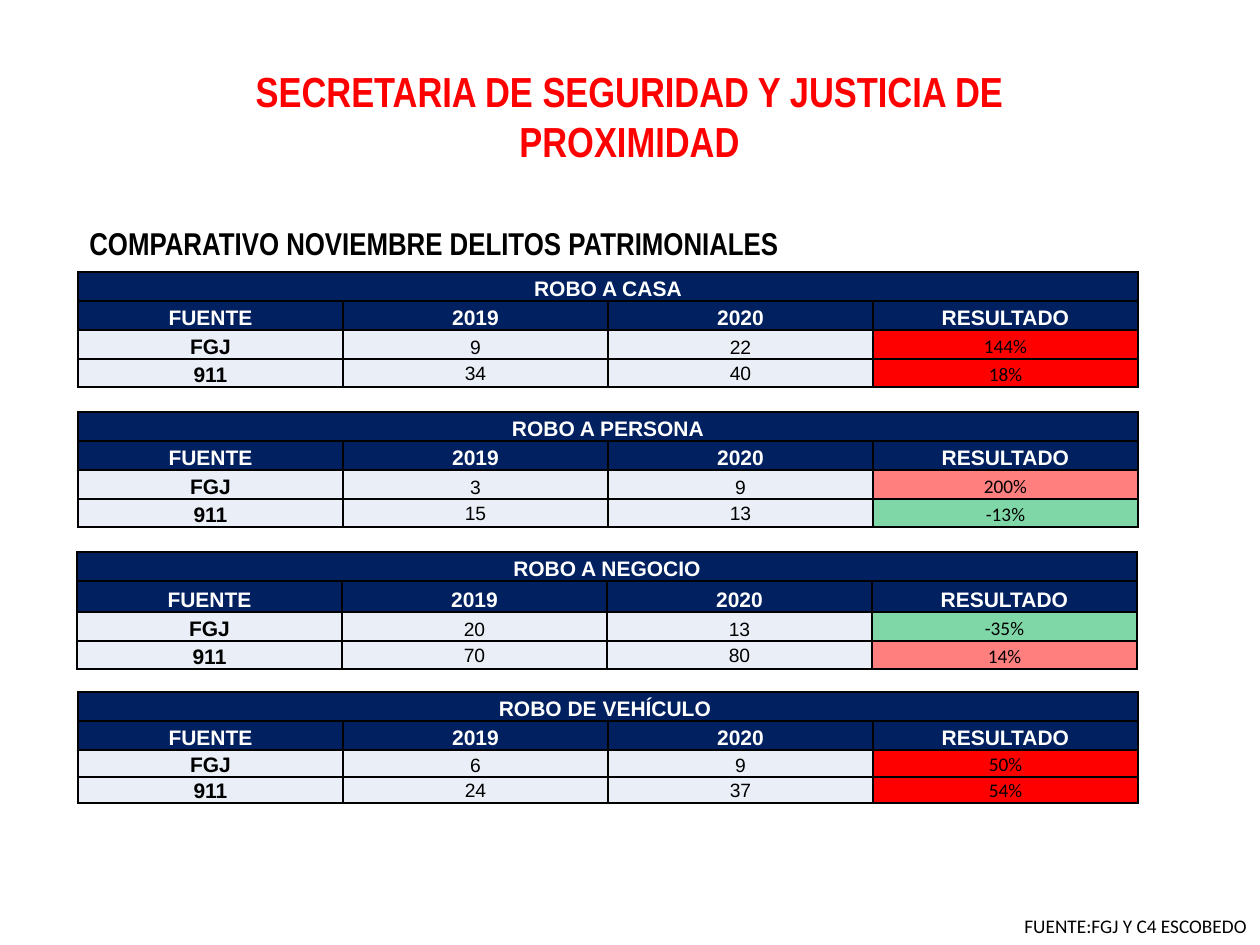
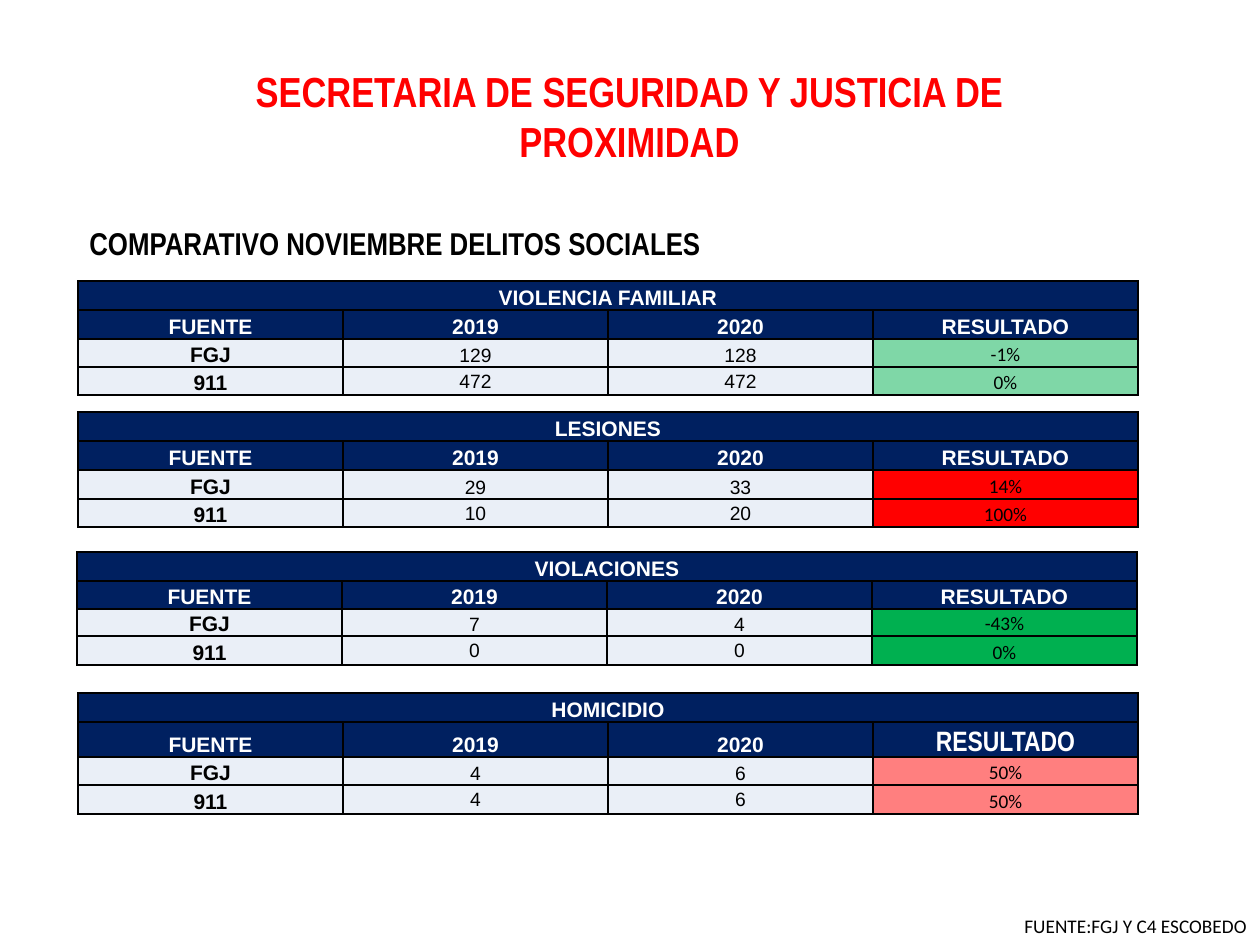
"""Build the November comparison slides on property and social crimes."""

from dataclasses import dataclass

import lxml.etree
import pptx
import pptx.dml.color
import pptx.enum.text
import pptx.oxml.ns
import pptx.presentation
import pptx.shapes.base
import pptx.slide
import pptx.table
import pptx.text.text
import pptx.util

PX_PER_INCH = 126
ALIGN = pptx.enum.text.PP_ALIGN
ANCHOR = pptx.enum.text.MSO_ANCHOR


@dataclass(frozen=True)
class TextStyle:
    font: str
    size: int
    color: str
    bold: bool = False


@dataclass(frozen=True)
class Theme:
    navy: str = "002060"
    pale: str = "EAEFF7"
    rise: str = "FF0000"
    fall: str = "00B050"
    border: str = "000000"
    border_points: int = 1
    title: TextStyle = TextStyle("Arial Narrow", 24, "FF0000", True)
    subtitle: TextStyle = TextStyle("Arial Narrow", 18, "000000", True)
    header: TextStyle = TextStyle("Arial", 12, "FFFFFF", True)
    large_header: TextStyle = TextStyle("Arial Narrow", 16, "FFFFFF", True)
    source: TextStyle = TextStyle("Arial", 12, "000000", True)
    number: TextStyle = TextStyle("Arial", 11, "000000")
    result: TextStyle = TextStyle("Calibri", 11, "000000")
    footer: TextStyle = TextStyle("Calibri", 11, "000000")


THEME = Theme()


@dataclass(frozen=True)
class Box:
    left: int
    top: int
    width: int
    height: int


@dataclass(frozen=True)
class CrimeTable:
    name: str
    top: int
    row_heights: tuple[int, int, int, int]
    prosecutor: tuple[int, int]
    emergency: tuple[int, int]
    opacity: int = 100
    left: int = 78
    result_header: TextStyle = THEME.header


@dataclass(frozen=True)
class CrimeSlide:
    subtitle: str
    tables: tuple[CrimeTable, ...]


TITLE = "SECRETARIA DE SEGURIDAD Y JUSTICIA DE PROXIMIDAD"
FOOTER = "FUENTE:FGJ Y C4 ESCOBEDO"
HEADERS = ("FUENTE", "2019", "2020", "RESULTADO")
TITLE_BOX = Box(239, 59, 781, 115)
SUBTITLE_BOX = Box(77, 218, 930, 50)
FOOTER_BOX = Box(1012, 908, 249, 37)
COLUMN_WIDTH = 265

SLIDES = (
    CrimeSlide("COMPARATIVO NOVIEMBRE DELITOS PATRIMONIALES", (
        CrimeTable("ROBO A CASA", 272, (29, 29, 29, 28), (9, 22), (34, 40)),
        CrimeTable("ROBO A PERSONA", 412, (29, 29, 29, 28), (3, 9), (15, 13), 50),
        CrimeTable("ROBO A NEGOCIO", 552, (29, 31, 29, 28), (20, 13), (70, 80), 50, 77),
        CrimeTable("ROBO DE VEHÍCULO ", 692, (29, 29, 27, 26), (6, 9), (24, 37)),
    )),
    CrimeSlide("COMPARATIVO NOVIEMBRE DELITOS SOCIALES", (
        CrimeTable("VIOLENCIA FAMILIAR", 281, (29, 29, 28, 28), (129, 128), (472, 472), 50),
        CrimeTable("LESIONES", 412, (29, 29, 29, 28), (29, 33), (10, 20)),
        CrimeTable("VIOLACIONES", 552, (29, 28, 27, 29), (7, 4), (0, 0), left=77),
        CrimeTable("HOMICIDIO", 693, (29, 35, 28, 29), (4, 6), (4, 6), 50,
                   result_header=THEME.large_header),
    )),
)


def px(length: int) -> pptx.util.Emu:
    """Turn pixels into EMU."""
    return pptx.util.Emu(round(length * pptx.util.Inches(1) / PX_PER_INCH))


def write_text(text_frame: pptx.text.text.TextFrame, text: str, style: TextStyle,
               alignment: ALIGN) -> None:
    """Set the text of a frame and format its runs."""
    text_frame.text = text
    for paragraph in text_frame.paragraphs:
        paragraph.alignment = alignment
        for run in paragraph.runs:
            run.font.name = style.font
            run.font.size = pptx.util.Pt(style.size)
            run.font.bold = style.bold
            run.font.color.rgb = pptx.dml.color.RGBColor.from_string(style.color)


def place(shape: pptx.shapes.base.BaseShape, box: Box) -> None:
    """Move and size a shape."""
    shape.left, shape.top = px(box.left), px(box.top)
    shape.width, shape.height = px(box.width), px(box.height)


def add_title(slide: pptx.slide.Slide) -> None:
    """Fill the title placeholder."""
    title = slide.shapes.title
    place(title, TITLE_BOX)
    write_text(title.text_frame, TITLE, THEME.title, ALIGN.CENTER)
    title.text_frame.vertical_anchor = ANCHOR.TOP
    title.text_frame.auto_size = pptx.enum.text.MSO_AUTO_SIZE.SHAPE_TO_FIT_TEXT


def add_label(slide: pptx.slide.Slide, text: str, box: Box, style: TextStyle,
              wrap: bool) -> None:
    """Add a left-aligned text box."""
    label = slide.shapes.add_textbox(px(box.left), px(box.top), px(box.width), px(box.height))
    write_text(label.text_frame, text, style, ALIGN.LEFT)
    label.text_frame.word_wrap = wrap
    label.text_frame.auto_size = pptx.enum.text.MSO_AUTO_SIZE.SHAPE_TO_FIT_TEXT


def add_borders(cell: pptx.table._Cell) -> None:
    """Draw a thin line on all four sides of a cell."""
    qualify = pptx.oxml.ns.qn
    properties = cell._tc.get_or_add_tcPr()
    for side in ("lnL", "lnR", "lnT", "lnB"):
        line = lxml.etree.SubElement(properties, qualify(f"a:{side}"),
                                     w=str(pptx.util.Pt(THEME.border_points)))
        fill = lxml.etree.SubElement(line, qualify("a:solidFill"))
        lxml.etree.SubElement(fill, qualify("a:srgbClr"), val=THEME.border)


def style_cell(cell: pptx.table._Cell, color: str, opacity: int = 100,
               anchor: ANCHOR = ANCHOR.BOTTOM) -> None:
    """Set the margins, anchor, borders and fill of a cell."""
    cell.margin_left = cell.margin_right = cell.margin_top = px(1)
    cell.margin_bottom = 0
    cell.vertical_anchor = anchor
    add_borders(cell)
    cell.fill.solid()
    cell.fill.fore_color.rgb = pptx.dml.color.RGBColor.from_string(color)
    if opacity < 100:
        fill_color = cell._tc.tcPr.find(
            f"{pptx.oxml.ns.qn('a:solidFill')}/{pptx.oxml.ns.qn('a:srgbClr')}")
        lxml.etree.SubElement(fill_color, pptx.oxml.ns.qn("a:alpha"), val=str(opacity * 1000))


def add_crime_table(slide: pptx.slide.Slide, crime: CrimeTable) -> None:
    """Add one crime's comparison, with the change between years worked out."""
    columns = len(HEADERS)
    frame = slide.shapes.add_table(len(crime.row_heights), columns, px(crime.left), px(crime.top),
                                   px(COLUMN_WIDTH * columns), px(sum(crime.row_heights)))
    table = frame.table
    table.first_row = table.horz_banding = False
    for column in table.columns:
        column.width = px(COLUMN_WIDTH)
    for row, height in zip(table.rows, crime.row_heights):
        row.height = px(height)

    table.cell(0, 0).merge(table.cell(0, columns - 1))
    write_text(table.cell(0, 0).text_frame, crime.name, THEME.header, ALIGN.CENTER)
    header_styles = (THEME.header,) * (columns - 1) + (crime.result_header,)
    for index, (header, style) in enumerate(zip(HEADERS, header_styles)):
        style_cell(table.cell(0, index), THEME.navy)
        style_cell(table.cell(1, index), THEME.navy)
        write_text(table.cell(1, index).text_frame, header, style, ALIGN.CENTER)

    data_rows = (("FGJ", crime.prosecutor, ANCHOR.BOTTOM), ("911", crime.emergency, ANCHOR.MIDDLE))
    body_styles = (THEME.source, THEME.number, THEME.number, THEME.result)
    for row_index, (source, (before, after), number_anchor) in enumerate(data_rows, start=2):
        change = (after - before) / before if before else 0
        texts = (source, str(before), str(after), f"{change:.0%}")
        for index, (text, style) in enumerate(zip(texts, body_styles)):
            cell = table.cell(row_index, index)
            write_text(cell.text_frame, text, style, ALIGN.CENTER)
            if style is THEME.result:
                style_cell(cell, THEME.rise if change > 0 else THEME.fall, crime.opacity)
            else:
                anchor = number_anchor if style is THEME.number else ANCHOR.BOTTOM
                style_cell(cell, THEME.pale, anchor=anchor)


def add_crime_slide(presentation: pptx.presentation.Presentation, content: CrimeSlide) -> None:
    """Add one slide of crime tables."""
    title_only = presentation.slide_layouts.get_by_name("Title Only")
    slide = presentation.slides.add_slide(title_only)
    add_title(slide)
    add_label(slide, content.subtitle, SUBTITLE_BOX, THEME.subtitle, wrap=True)
    for crime in content.tables:
        add_crime_table(slide, crime)
    add_label(slide, FOOTER, FOOTER_BOX, THEME.footer, wrap=False)


def main() -> None:
    """Build and save the presentation."""
    presentation = pptx.Presentation()
    presentation.slide_width, presentation.slide_height = px(1260), px(945)
    for content in SLIDES:
        add_crime_slide(presentation, content)
    presentation.save("out.pptx")


if __name__ == "__main__":
    main()
